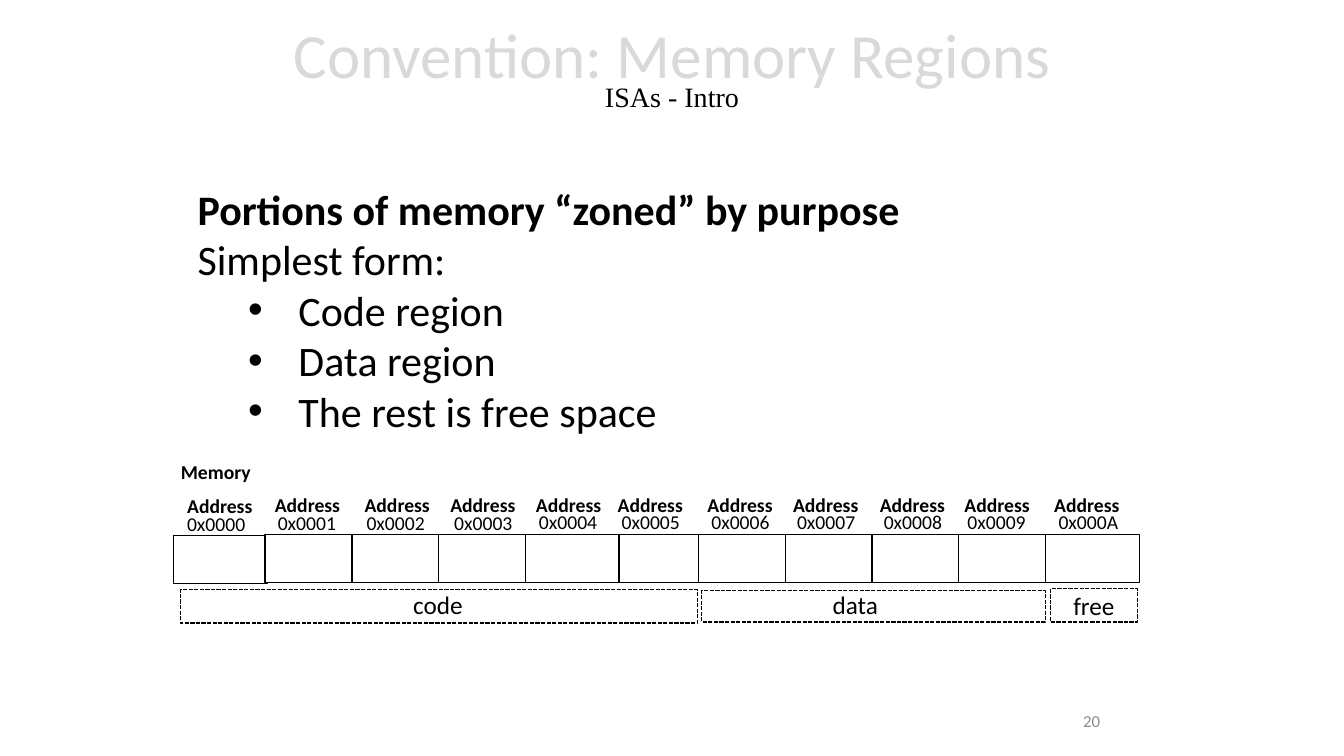
from lxml import etree
from pptx import Presentation
from pptx import util as u
from pptx.dml import color
from pptx.enum import dml, shapes, text
from pptx.oxml import ns

WIDTH, HEIGHT = 13.33, 7.5
COLUMNS, ROWS = 133.3, 75
CELL_WIDTH, CELL_HEIGHT, CELL_STEP = 9.3, 4.8, 8.6
ADDRESS_LEFTS = [17.9, 26.6, 35.5, 44, 52.5, 60.6, 69.5, 78, 86.6, 95, 103.9]
VALUE_LEFTS = [18.3, 27.3, 36.1, 44.8, 53.2, 61.4, 70.3, 78.8, 87.4, 95.7, 104.8]
CELL_LEFTS = [17.2] + [26.3 + CELL_STEP * step for step in range(10)]
CELL_ORDER = [5, 0, 1, 2, 3, 4, 6, 7, 8, 9, 10]
LEFT, CENTER, RIGHT = text.PP_ALIGN.LEFT, text.PP_ALIGN.CENTER, text.PP_ALIGN.RIGHT


def grid(left, top, width, height):
    column, row = WIDTH / COLUMNS, HEIGHT / ROWS
    return [u.Inches(length) for length in
            (left * column, top * row, width * column, height * row)]


def paint(format_part, value):
    format_part.rgb = color.RGBColor.from_string(value)


def place(shape, *cells):
    shape.left, shape.top, shape.width, shape.height = grid(*cells)


def add_run(paragraph, words, size, bold=False, ink="000000", font="Calibri"):
    run = paragraph.add_run()
    run.text = words
    run.font.name, run.font.size, run.font.bold = font, u.Pt(size), bold
    run.font.fill.solid()
    paint(run.font.fill.fore_color, ink)
    return run


def outline_text(run, ink):
    line = etree.Element(ns.qn("a:ln"), w=str(u.Pt(1)))
    fill = etree.SubElement(line, ns.qn("a:solidFill"))
    etree.SubElement(fill, ns.qn("a:srgbClr"), val=ink)
    run.font._element.insert(0, line)


def set_bullet(paragraph, symbol=None):
    properties = paragraph._p.get_or_add_pPr()
    properties.set("marL", str(u.Inches(1 if symbol else 0)))
    properties.set("indent", str(u.Inches(-0.5 if symbol else 0)))
    if symbol:
        etree.SubElement(properties, ns.qn("a:buFont"), typeface="Arial")
        etree.SubElement(properties, ns.qn("a:buChar"), char=symbol)
    else:
        etree.SubElement(properties, ns.qn("a:buNone"))


def add_label(parent, words, cells, size=14, bold=False, ink="000000",
              align=CENTER, inset=0, wrap=True, anchor=text.MSO_ANCHOR.TOP):
    box = parent.add_textbox(*grid(*cells))
    frame = box.text_frame
    frame.word_wrap = wrap
    frame.vertical_anchor = anchor
    frame.margin_left = frame.margin_right = u.Inches(inset)
    paragraph = frame.paragraphs[0]
    paragraph.alignment = align
    add_run(paragraph, words, size, bold, ink)


def add_box(parent, cells, fill=None, dashed=False):
    box = parent.add_shape(shapes.MSO_SHAPE.RECTANGLE, *grid(*cells))
    box.shadow.inherit = False
    if fill:
        box.fill.solid()
        paint(box.fill.fore_color, fill)
    else:
        box.fill.background()
    paint(box.line.color, "000000")
    box.line.width = u.Pt(1)
    if dashed:
        box.line.dash_style = dml.MSO_LINE.SQUARE_DOT
    return box


def fill_title(title):
    place(title, 0, 0.1, COLUMNS, 14.5)
    title.text_frame.vertical_anchor = text.MSO_ANCHOR.MIDDLE
    paragraph = title.text_frame.paragraphs[0]
    paragraph.alignment = CENTER
    paragraph.line_spacing = 0.7
    outline_text(add_run(paragraph, "Convention: Memory Regions", 45, ink="D9D9D9"), "000000")
    paragraph.add_line_break()
    add_run(paragraph, "ISAs - Intro", 20, font="Times New Roman")


def fill_body(body):
    place(body, 18.6, 17.7, 72.4, 26.3)
    frame = body.text_frame
    frame.word_wrap = False
    frame.auto_size = text.MSO_AUTO_SIZE.SHAPE_TO_FIT_TEXT
    lines = [("Portions of memory “zoned” by purpose", 0, True), ("Simplest form:", 0, False),
             ("Code region", 1, False), ("Data region", 1, False),
             ("The rest is free space", 1, False)]
    for index, (words, level, bold) in enumerate(lines):
        paragraph = frame.add_paragraph() if index else frame.paragraphs[0]
        paragraph.level = level
        paragraph.alignment = LEFT
        paragraph.space_before = u.Pt(0)
        set_bullet(paragraph, "•" if level else None)
        add_run(paragraph, words, 30, bold)


def add_memory(slide):
    memory = slide.shapes.add_group_shape().shapes
    for index in CELL_ORDER:
        top = 53 if index else 53.1
        add_box(memory, (CELL_LEFTS[index], top, CELL_WIDTH, CELL_HEIGHT), "FFFFFF")
    for index, (address, value) in enumerate(zip(ADDRESS_LEFTS, VALUE_LEFTS)):
        address_top = 48.4 if index else 48.5
        value_top = 50.3 if index == 0 else 50.2 if index < 4 else 50.1
        add_label(memory, "Address", (address, address_top, 7.8, 3.4), bold=True)
        add_label(memory, f"0x{index:04X}", (value, value_top, 6.3, 3.5))
    add_label(memory, "Memory", (17.5, 45.1, 7.8, 3.4), bold=True)


def add_regions(slide):
    add_box(slide.shapes, (17.9, 58.5, 51.3, 3.3), dashed=True)
    add_label(slide.shapes, "code", (40, 58, 7, 4), 18, align=LEFT, inset=0.1, wrap=False)
    add_box(slide.shapes, (69.6, 58.6, 34.1, 3.1), dashed=True)
    add_label(slide.shapes, "data", (81.6, 58, 6.6, 4), 18, align=LEFT, inset=0.1, wrap=False)
    free = add_box(slide.shapes, (104.2, 58.4, 8.6, 3.3), dashed=True)
    free.text_frame.vertical_anchor = text.MSO_ANCHOR.MIDDLE
    paragraph = free.text_frame.paragraphs[0]
    paragraph.alignment = CENTER
    add_run(paragraph, "free", 18)


def main():
    presentation = Presentation()
    presentation.slide_width, presentation.slide_height = u.Inches(WIDTH), u.Inches(HEIGHT)
    slide = presentation.slides.add_slide(presentation.slide_layouts[1])
    fill_title(slide.shapes.title)
    fill_body(slide.placeholders[1])
    add_label(slide.shapes, "20", (80.1, 69.5, 30, 4), 12, ink="8C8C8C",
              align=RIGHT, inset=0.1, anchor=text.MSO_ANCHOR.MIDDLE)
    add_memory(slide)
    add_regions(slide)
    presentation.save("out.pptx")


if __name__ == "__main__":
    main()
